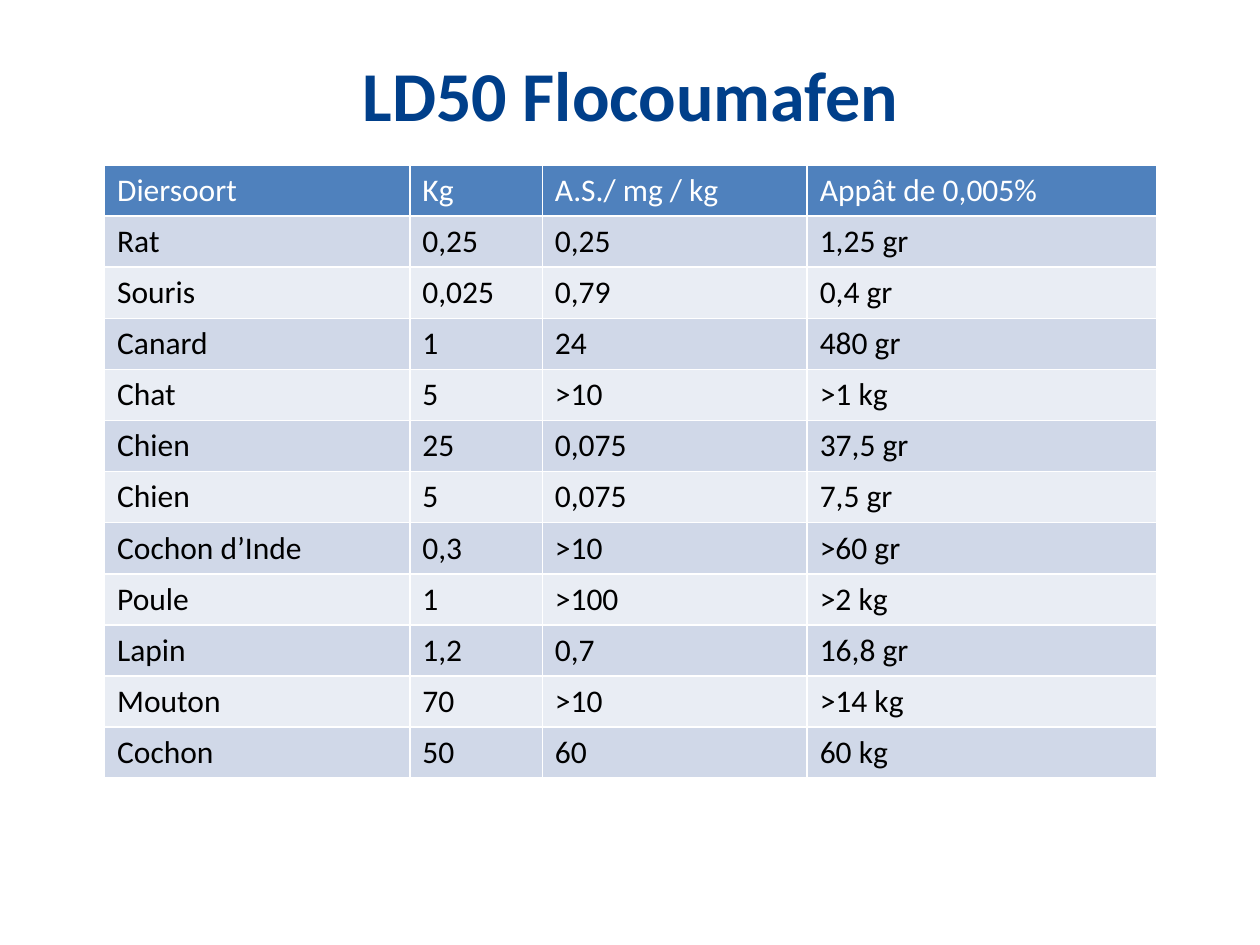
"""Build the LD50 Flocoumafen slide with its table of doses per species."""
import dataclasses

import pptx
import pptx.dml.color
import pptx.enum.text
import pptx.oxml
import pptx.oxml.ns
import pptx.util


@dataclasses.dataclass(frozen=True)
class Theme:
    font: str = "Calibri"
    title_size: int = 40
    cell_size: int = 18
    border_width: int = 1
    title: str = "003F8A"
    header: str = "4F81BD"
    bands: tuple = ("D0D8E8", "E9EDF4")
    light: str = "FFFFFF"
    dark: str = "000000"


class Deck:
    def __init__(self, theme, width=10, height=7.5):
        self.theme = theme
        self.prs = pptx.Presentation()
        self.prs.slide_width = pptx.util.Inches(width)
        self.prs.slide_height = pptx.util.Inches(height)
        self.s = None

    def add_slide(self, layout=5):
        self.s = self.prs.slides.add_slide(self.prs.slide_layouts[layout])

    def box(self, left, top, width, height):
        w, h = self.prs.slide_width, self.prs.slide_height
        values = (left * w, top * h, width * w, height * h)
        return dict(zip(("left", "top", "width", "height"), map(round, values)))

    def add_text(self, tf, text, color, size, bold=False):
        r = tf.paragraphs[0].add_run()
        r.text = text
        style = {"name": self.theme.font, "size": pptx.util.Pt(size), "bold": bold}
        for name, value in style.items():
            setattr(r.font, name, value)
        r.font.color.rgb = pptx.dml.color.RGBColor.from_string(color)

    def title(self, text, *area):
        sp = self.s.shapes.title
        for name, value in self.box(*area).items():
            setattr(sp, name, value)
        tf = sp.text_frame
        style = {
            "word_wrap": True,
            "vertical_anchor": pptx.enum.text.MSO_ANCHOR.TOP,
            "auto_size": pptx.enum.text.MSO_AUTO_SIZE.SHAPE_TO_FIT_TEXT,
        }
        for name, value in style.items():
            setattr(tf, name, value)
        tf.paragraphs[0].alignment = pptx.enum.text.PP_ALIGN.CENTER
        self.add_text(tf, text, self.theme.title, self.theme.title_size, bold=True)

    def borders(self, cell):
        tc_pr = cell._tc.get_or_add_tcPr()
        width = pptx.util.Pt(self.theme.border_width)
        for i, side in enumerate(("lnL", "lnR", "lnT", "lnB")):
            tc_pr.insert(i, pptx.oxml.parse_xml(
                f'<a:{side} {pptx.oxml.ns.nsdecls("a")} w="{width}"><a:solidFill>'
                f'<a:srgbClr val="{self.theme.light}"/></a:solidFill></a:{side}>'))

    def table(self, rows, shares, *area):
        box = self.box(*area)
        table = self.s.shapes.add_table(len(rows), len(shares), **box).table
        for column, share in zip(table.columns, shares):
            column.width = round(box["width"] * share / sum(shares))
        for i, row in enumerate(rows):
            fill = self.theme.bands[(i - 1) % 2] if i else self.theme.header
            color = self.theme.dark if i else self.theme.light
            for j, text in enumerate(row):
                cell = table.cell(i, j)
                cell.fill.solid()
                cell.fill.fore_color.rgb = pptx.dml.color.RGBColor.from_string(fill)
                self.add_text(cell.text_frame, text, color, self.theme.cell_size)
                self.borders(cell)


DOSES = [
    ("Diersoort", "Kg", "A.S./ mg / kg", "Appât de 0,005%"),
    ("Rat", "0,25", "0,25", "1,25 gr"),
    ("Souris", "0,025", "0,79", "0,4 gr"),
    ("Canard", "1", "24", "480 gr"),
    ("Chat", "5", ">10", ">1 kg"),
    ("Chien", "25", "0,075", "37,5 gr"),
    ("Chien", "5", "0,075", "7,5 gr"),
    ("Cochon d’Inde", "0,3", ">10", ">60 gr"),
    ("Poule", "1", ">100", ">2 kg"),
    ("Lapin", "1,2", "0,7", "16,8 gr"),
    ("Mouton", "70", ">10", ">14 kg"),
    ("Cochon", "50", "60", "60 kg"),
]


def main():
    deck = Deck(Theme())
    deck.add_slide()
    deck.title("LD50 Flocoumafen", 0.23 / 10, 0.36 / 7.5, 9.55 / 10, 0.77 / 7.5)
    deck.table(DOSES, (2.42, 1.05, 2.1, 2.77), 0.83 / 10, 1.31 / 7.5, 8.35 / 10, 4.87 / 7.5)
    deck.prs.save("out.pptx")


if __name__ == "__main__":
    main()
